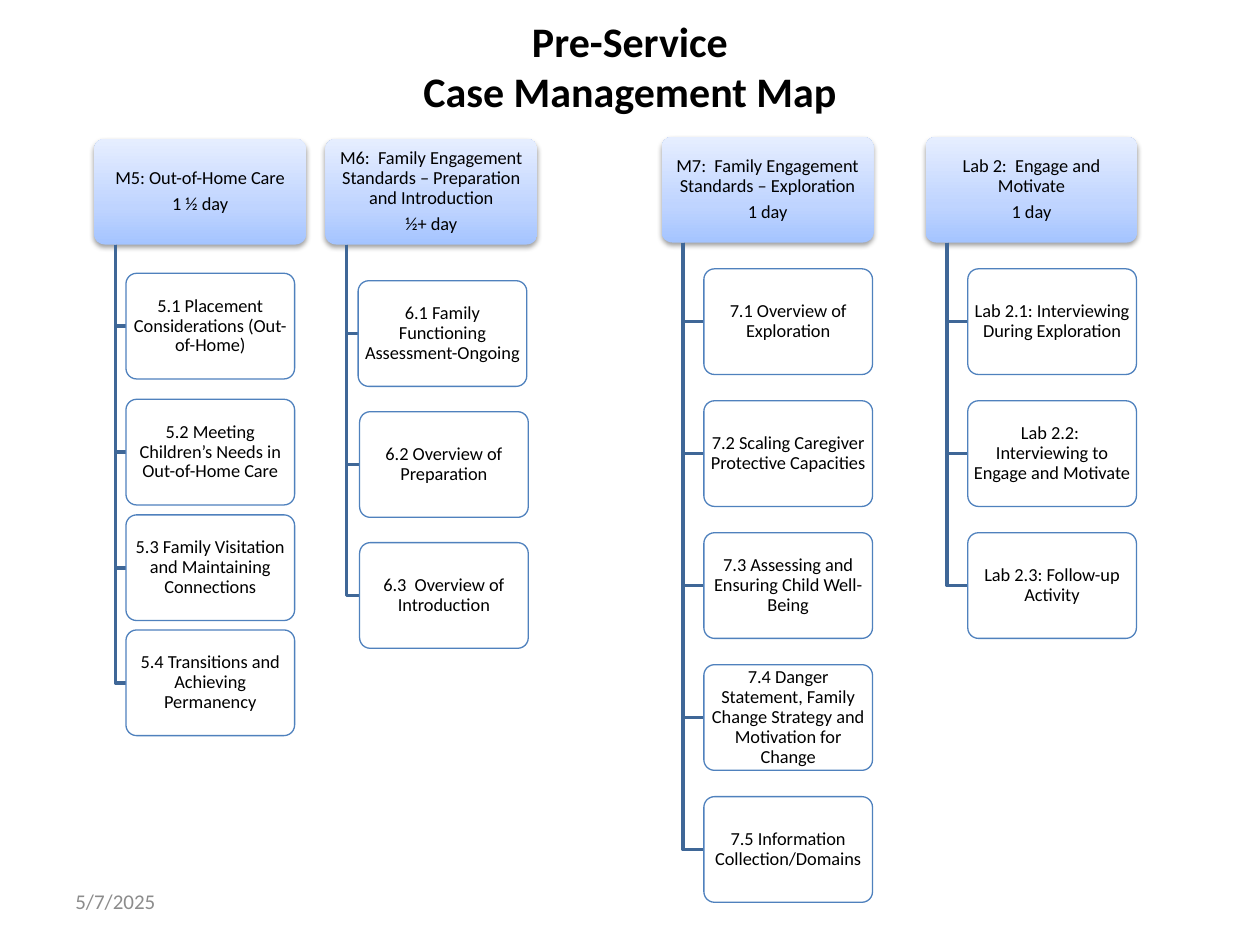
from lxml.etree import SubElement
from pptx import Presentation
from pptx.dml.color import RGBColor
from pptx.enum.shapes import MSO_SHAPE as Shape
from pptx.enum.text import MSO_ANCHOR as Anchor, PP_ALIGN as Align
from pptx.oxml.ns import qn
from pptx.util import Cm, Pt

HEADER_WIDTH, ITEM_WIDTH, BOX_HEIGHT = 4.27, 3.4, 2.13
TRUNK_INDENT = 0.43
FONT = "Calibri"
BOX_PARA = {"alignment": Align.CENTER, "line_spacing": 0.9, "space_after": Pt(3.7)}
GRADIENT = [(0, "A4C4FF"), (35, "BFD4FF"), (100, "E6EEFF")]

COLUMNS = [
    {
        "left": 1.9, "top": 2.8, "indent": [0.64] * 4,
        "drops": [2.71, 5.25, 7.58, 9.9],
        "header": ["M5: Out-of-Home Care", "1 ½ day"],
        "items": [
            "5.1 Placement Considerations (Out-of-Home)",
            "5.2 Meeting Children’s Needs in Out-of-Home Care",
            "5.3 Family Visitation and Maintaining Connections",
            "5.4 Transitions and Achieving Permanency",
        ],
    },
    {
        "left": 6.56, "top": 2.8, "indent": [0.66, 0.69, 0.69],
        "drops": [2.86 + 2.64 * row for row in range(3)],
        "header": ["M6:  Family Engagement Standards – Preparation and Introduction", "½+ day"],
        "items": [
            "6.1 Family Functioning Assessment-Ongoing",
            "6.2 Overview of Preparation",
            "6.3  Overview of Introduction",
        ],
    },
    {
        "left": 13.34, "top": 2.76, "indent": [0.85] * 5,
        "drops": [2.66 * row for row in range(1, 6)],
        "header": ["M7:  Family Engagement Standards – Exploration", "1 day"],
        "items": [
            "7.1 Overview of Exploration",
            "7.2 Scaling Caregiver Protective Capacities",
            "7.3 Assessing and Ensuring Child Well-Being",
            "7.4 Danger Statement, Family Change Strategy and Motivation for Change",
            "7.5 Information Collection/Domains",
        ],
    },
    {
        "left": 18.66, "top": 2.76, "indent": [0.85] * 3,
        "drops": [2.66 * row for row in range(1, 4)],
        "header": ["Lab 2:  Engage and Motivate", "1 day"],
        "items": [
            "Lab 2.1: Interviewing During Exploration",
            "Lab 2.2:  Interviewing to Engage and Motivate",
            "Lab 2.3: Follow-up Activity",
        ],
    },
]


def color(value):
    return RGBColor.from_string(value)


def apply(target, values):
    for name, value in values.items():
        setattr(target, name, value)


def write(frame, lines, para_format, size, tint="000000", bold=False):
    apply(frame, {"word_wrap": True, "vertical_anchor": Anchor.MIDDLE})
    frame.text = "\n".join(lines)
    for para in frame.paragraphs:
        apply(para, para_format)
        for span in para.runs:
            apply(span.font, {"name": FONT, "size": Pt(size), "bold": bold})
            span.font.color.rgb = color(tint)


def add_label(page, left, top, width, height, text, **style):
    box = page.shapes.add_textbox(Cm(left), Cm(top), Cm(width), Cm(height))
    write(box.text_frame, [text], **style)


def add_box(page, left, top, width, lines):
    box = page.shapes.add_shape(
        Shape.ROUNDED_RECTANGLE, Cm(left), Cm(top), Cm(width), Cm(BOX_HEIGHT))
    box.adjustments[0] = 0.1
    box.shadow.inherit = False
    margins = ("margin_left", "margin_top", "margin_right", "margin_bottom")
    apply(box.text_frame, dict.fromkeys(margins, Cm(0.05)))
    write(box.text_frame, lines, BOX_PARA, 10.5)
    return box


def add_color_node(parent, value, alpha=None):
    node = SubElement(parent, qn("a:srgbClr"), val=value)
    if alpha is not None:
        SubElement(node, qn("a:alpha"), val=str(alpha * 1000))


def add_header(page, left, top, lines):
    box = add_box(page, left, top, HEADER_WIDTH, lines)
    box.line.fill.background()
    box.fill.gradient()
    box.fill.gradient_angle = 90
    properties = box.element.spPr
    stops = properties.find(".//" + qn("a:gsLst"))
    for stop in list(stops):
        stops.remove(stop)
    for position, value in GRADIENT:
        add_color_node(SubElement(stops, qn("a:gs"), pos=str(position * 1000)), value)
    shadow = SubElement(
        properties.find(qn("a:effectLst")), qn("a:outerShdw"),
        blurRad=str(Pt(3.1)), dist=str(Pt(1.6)), dir="5400000", rotWithShape="0")
    add_color_node(shadow, "000000", 38)


def add_item(page, left, top, text):
    box = add_box(page, left, top, ITEM_WIDTH, [text])
    box.fill.solid()
    box.fill.fore_color.rgb = color("FFFFFF")
    fill_color = box.element.spPr.find(qn("a:solidFill")).find(qn("a:srgbClr"))
    SubElement(fill_color, qn("a:alpha"), val="90000")
    box.line.color.rgb = color("4F81BD")
    box.line.width = Pt(0.75)


def add_branch(page, left, top, right, bottom):
    builder = page.shapes.build_freeform(Cm(left), Cm(top))
    corners = [(Cm(left), Cm(bottom)), (Cm(right), Cm(bottom))]
    builder.add_line_segments(corners, close=False)
    branch = builder.convert_to_shape()
    branch.shadow.inherit = False
    branch.fill.background()
    branch.line.color.rgb = color("3F6797")
    branch.line.width = Pt(2)


def add_column(page, left, top, header, items, drops, indent):
    add_header(page, left, top, header)
    for text, drop, shift in zip(items, drops, indent):
        item_left, item_top = left + shift, top + drop
        add_branch(page, left + TRUNK_INDENT, top + BOX_HEIGHT,
                   item_left, item_top + BOX_HEIGHT / 2)
        add_item(page, item_left, item_top, text)


def main():
    deck = Presentation()
    apply(deck, {"slide_width": Cm(25.4), "slide_height": Cm(19.05)})
    page = deck.slides.add_slide(deck.slide_layouts[6])
    add_label(page, 1.27, 0.76, 22.86, 1.14, "Pre-Service\vCase Management Map",
              para_format={"alignment": Align.CENTER}, size=24, bold=True)
    for column in COLUMNS:
        add_column(page, **column)
    add_label(page, 1.27, 17.65, 5.92, 1.02, "5/7/2025",
              para_format={"alignment": Align.LEFT}, size=12, tint="8C8C8C")
    deck.save("out.pptx")


if __name__ == "__main__":
    main()
